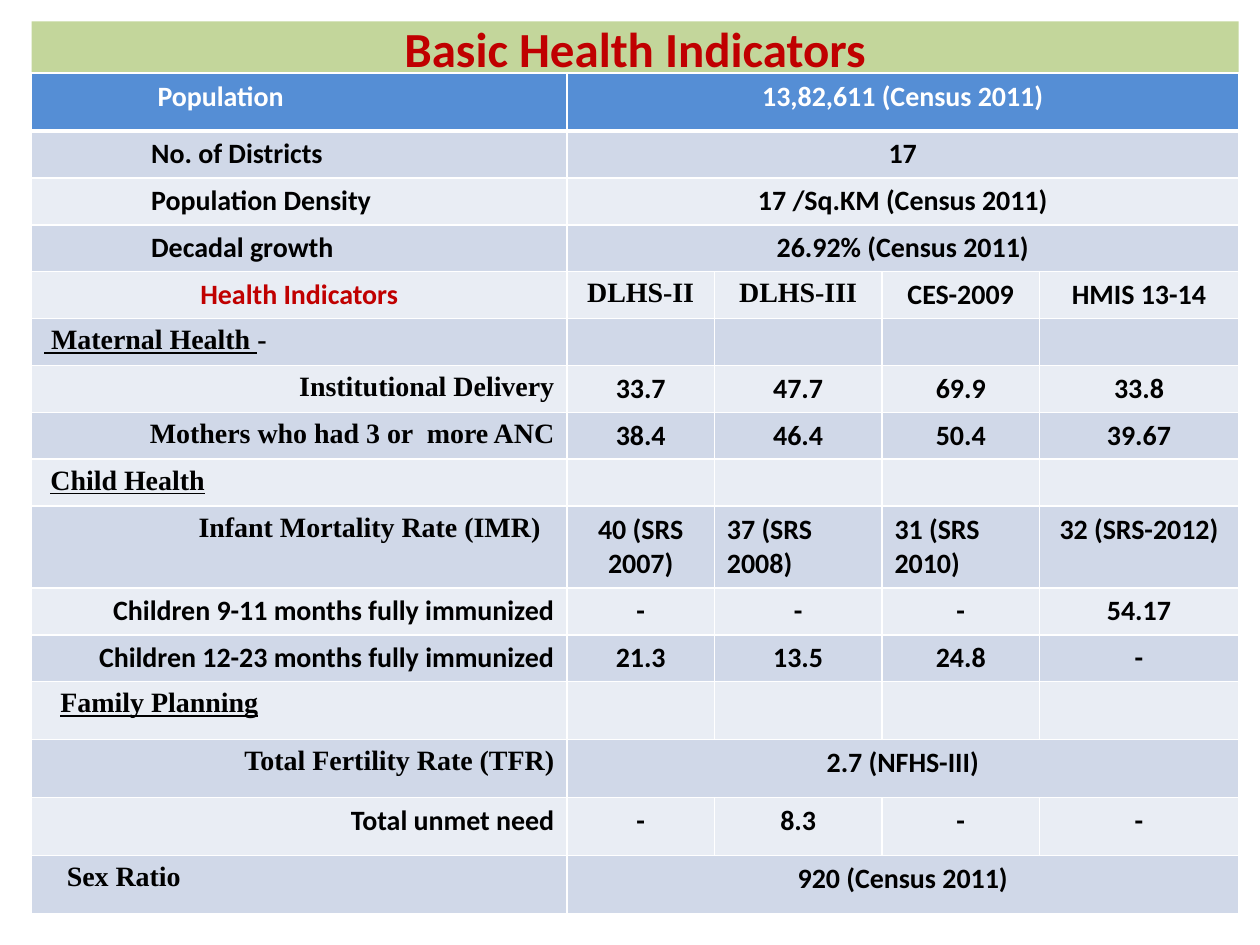
"""Build a slide with a table of basic health indicators."""
from lxml import etree
from pptx import Presentation, util as u
from pptx.dml import color
from pptx.enum import shapes, text
from pptx.oxml import ns

SANS, SERIF = "Calibri", "Times New Roman"
WHITE, BLACK, RED = "FFFFFF", "000000", "C00000"
GREEN, BLUE, BANDS = "C3D69B", "558ED5", ("E9EDF4", "D0D8E8")
LEFT, CENTER, RIGHT = text.PP_ALIGN.LEFT, text.PP_ALIGN.CENTER, text.PP_ALIGN.RIGHT

TITLE = "Basic Health Indicators"
COLUMN_WIDTHS = [4.25, 1.17, 1.33, 1.25, 1.58]
ROW_HEIGHTS = [0.46] + [0.37] * 8 + [0.65] + [0.37] * 2 + [0.46] * 4
BLANKS = [""] * 4
ROWS = [
    ("Population", SANS, LEFT, 0.9, ["13,82,611 (Census 2011)"]),
    ("No. of Districts", SANS, LEFT, 0.85, ["17"]),
    ("Population Density", SANS, LEFT, 0.85, ["17 /Sq.KM (Census 2011)"]),
    ("Decadal growth", SANS, LEFT, 0.85, ["26.92% (Census 2011)"]),
    ("Health Indicators", SANS, CENTER, 0, ["DLHS-II", "DLHS-III", "CES-2009", "HMIS 13-14"]),
    (" Maternal Health |-", SERIF, LEFT, 0, BLANKS),
    ("Institutional Delivery", SERIF, RIGHT, 0, ["33.7", "47.7", "69.9", "33.8"]),
    ("Mothers who had 3 or  more ANC", SERIF, RIGHT, 0, ["38.4", "46.4", "50.4", "39.67"]),
    ("Child Health", SERIF, LEFT, 0.05, BLANKS),
    ("Infant Mortality Rate (IMR)", SERIF, RIGHT, 0.11,
     ["40 (SRS 2007)", "37 (SRS 2008)", "31 (SRS 2010)", "32 (SRS-2012)"]),
    ("Children 9-11 months fully immunized", SANS, RIGHT, 0, ["-", "-", "-", "54.17"]),
    ("Children 12-23 months fully immunized", SANS, RIGHT, 0, ["21.3", "13.5", "24.8", "-"]),
    ("Family Planning", SERIF, LEFT, 0.13, BLANKS),
    ("Total Fertility Rate (TFR)", SERIF, RIGHT, 0, ["2.7 (NFHS-III)"]),
    ("Total unmet need", SANS, RIGHT, 0, ["-", "8.3", "-", "-"]),
    ("Sex Ratio", SERIF, LEFT, 0.18, ["920 (Census 2011)"]),
]
LEFT_VALUES = ("37 (SRS 2008)", "31 (SRS 2010)")


def rgb(value):
    """Turn a hex string into a colour."""
    return color.RGBColor.from_string(value)


def add_run(paragraph, words, font, ink, size=16, underline=None):
    """Add one bold run to a paragraph."""
    run = paragraph.add_run()
    run.text = words
    run.font.name, run.font.size, run.font.bold = font, u.Pt(size), True
    run.font.underline = underline
    run.font.color.rgb = rgb(ink)


def style_cell(cell, fill, top, bottom):
    """Give a cell white borders of the given widths and a solid fill."""
    properties = cell._tc.get_or_add_tcPr()
    for side, width in (("L", 1), ("R", 1), ("T", top), ("B", bottom)):
        line = etree.SubElement(properties, ns.qn(f"a:ln{side}"), w=str(u.Pt(width)))
        solid = etree.SubElement(line, ns.qn("a:solidFill"))
        etree.SubElement(solid, ns.qn("a:srgbClr"), val=WHITE)
    cell.fill.solid()
    cell.fill.fore_color.rgb = rgb(fill)


def write_label(cell, label, font, ink, align, indent, underline):
    """Write a row label, underlining its first part in a section row."""
    paragraph = cell.text_frame.paragraphs[0]
    paragraph.alignment = align
    if indent:
        side = "marR" if align == RIGHT else "marL"
        paragraph._p.get_or_add_pPr().set(side, str(u.Inches(indent)))
    for index, part in enumerate(label.split("|")):
        add_run(paragraph, part, font, ink, underline=(underline and index == 0) or None)


def write_value(cell, value, ink):
    """Write a value, or set the text size of an empty cell."""
    paragraph = cell.text_frame.paragraphs[0]
    if value:
        paragraph.alignment = LEFT if value in LEFT_VALUES else CENTER
        add_run(paragraph, value, SERIF if value.startswith("DLHS") else SANS, ink)
    else:
        etree.SubElement(paragraph._p, ns.qn("a:endParaRPr"), sz="1600")


def add_title(slide):
    """Add the title band."""
    band = slide.shapes.add_shape(shapes.MSO_SHAPE.RECTANGLE, u.Inches(0.25), u.Inches(0.17),
                                  u.Inches(9.58), u.Inches(0.42))
    band.shadow.inherit = False
    band.fill.solid()
    band.fill.fore_color.rgb = rgb(GREEN)
    band.line.fill.background()
    frame = band.text_frame
    frame.word_wrap = True
    frame.margin_top = frame.margin_bottom = 0
    frame.vertical_anchor = text.MSO_ANCHOR.MIDDLE
    frame.paragraphs[0].alignment = CENTER
    add_run(frame.paragraphs[0], TITLE, SANS, RED, 28)


def add_indicators(slide):
    """Add the indicator table."""
    table = slide.shapes.add_table(len(ROWS), len(COLUMN_WIDTHS), u.Inches(0.25), u.Inches(0.58),
                                   u.Inches(sum(COLUMN_WIDTHS)),
                                   u.Inches(sum(ROW_HEIGHTS))).table
    for column, width in zip(table.columns, COLUMN_WIDTHS):
        column.width = u.Inches(width)
    for index, (label, font, align, indent, values) in enumerate(ROWS):
        table.rows[index].height = u.Inches(ROW_HEIGHTS[index])
        cells = list(table.rows[index].cells)
        fill = BANDS[index % 2] if index else BLUE
        ink = BLACK if index else WHITE
        for cell in cells:
            style_cell(cell, fill, 3 if index == 1 else 1, 3 if index == 0 else 1)
        if len(values) == 1:
            cells[1].merge(cells[-1])
        label_ink = RED if align == CENTER else ink
        write_label(cells[0], label, font, label_ink, align, indent, values is BLANKS)
        for cell, value in zip(cells[1:], values):
            write_value(cell, value, ink)


def main():
    """Create and save the presentation."""
    presentation = Presentation()
    presentation.slide_width, presentation.slide_height = u.Inches(10), u.Inches(7.5)
    slide = presentation.slides.add_slide(presentation.slide_layouts[6])
    add_title(slide)
    add_indicators(slide)
    presentation.save("out.pptx")


if __name__ == "__main__":
    main()
